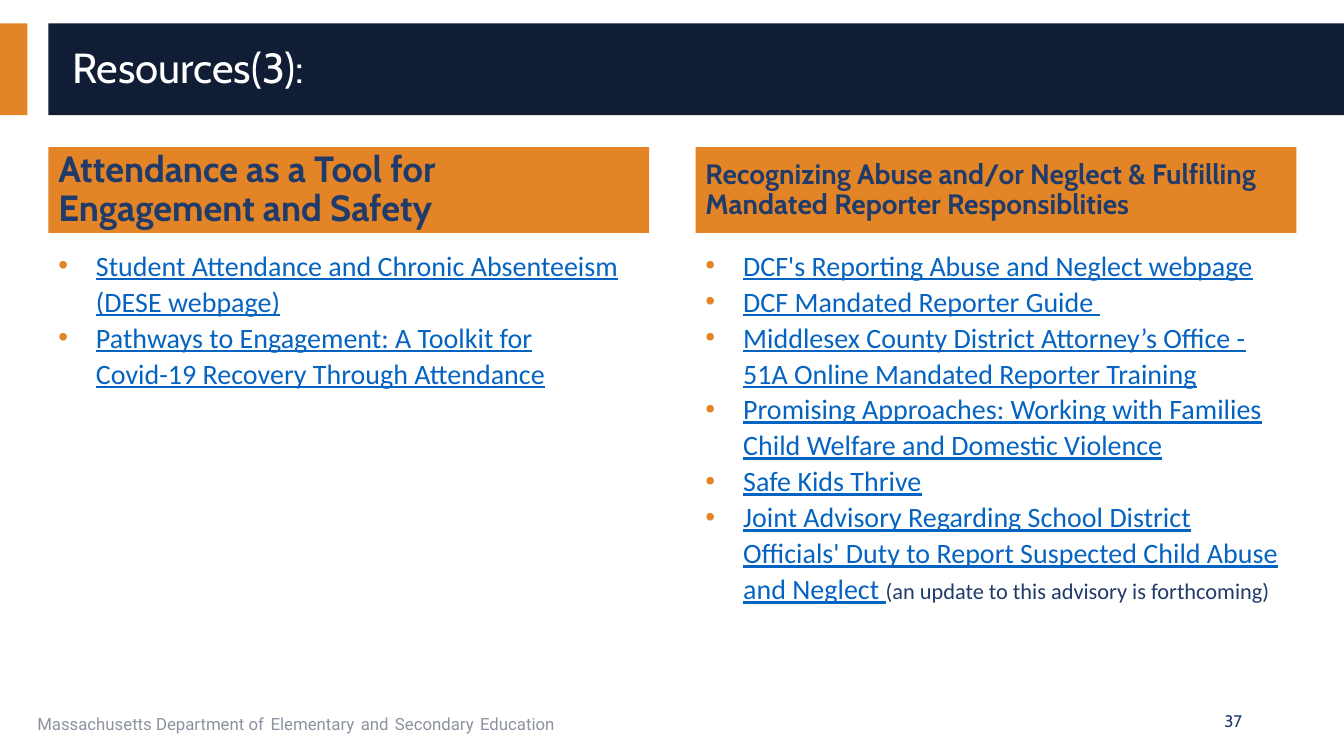
from lxml.etree import SubElement as Sub
from pptx import Presentation as Deck
from pptx.dml.color import RGBColor as Rgb
from pptx.enum.shapes import MSO_SHAPE as Kind
from pptx.enum.text import MSO_ANCHOR as Anchor, PP_ALIGN as Align
from pptx.oxml.ns import qn
from pptx.util import Cm, Pt

HUES = {"orange": "E38526", "navy": "101D35", "blue": "203B6A",
        "link": "0563C1", "gray": "8D92A1", "white": "FFFFFF"}

LEFT = [
    "Student Attendance and Chronic Absenteeism (DESE webpage)",
    "Pathways to Engagement: A Toolkit for Covid-19 Recovery Through Attendance",
]
RIGHT = [
    "DCF's Reporting Abuse and Neglect webpage",
    "DCF Mandated Reporter Guide ",
    "Middlesex County District Attorney’s Office - 51A Online Mandated Reporter Training",
    "Promising Approaches: Working with Families Child Welfare and Domestic Violence",
    "Safe Kids Thrive",
    "Joint Advisory Regarding School District Officials' Duty to Report Suspected "
    "Child Abuse and Neglect ",
]
NOTE = "(an update to this advisory is forthcoming)"
OWNER = ["Massachusetts Department of", "Elementary", "and", "Secondary", "Education"]


def tint(name):
    return Rgb.from_string(HUES[name])


def write(para, text, size=20, face="Cabin", hue="blue", bold=False, line=False):
    run = para.add_run()
    run.text = text
    font = run.font
    font.size, font.name = Pt(size), face
    font.bold, font.underline = bold, line
    font.color.rgb = tint(hue)


def bar(slide, x, y, w, h, hue):
    shape = slide.shapes.add_shape(Kind.RECTANGLE, Cm(x), Cm(y), Cm(w), Cm(h))
    shape.shadow.inherit = False
    shape.fill.solid()
    shape.fill.fore_color.rgb = tint(hue)
    shape.line.fill.background()
    return shape


def frame(slide, x, y, w, h, anchor=Anchor.TOP):
    area = slide.shapes.add_textbox(Cm(x), Cm(y), Cm(w), Cm(h)).text_frame
    area.word_wrap = True
    area.vertical_anchor = anchor
    return area


def bullet(para):
    props = para._p.get_or_add_pPr()
    props.set("marL", str(Cm(0.95)))
    props.set("indent", str(-Cm(0.95)))
    Sub(Sub(props, qn("a:buClr")), qn("a:srgbClr"), val=HUES["orange"])
    Sub(props, qn("a:buFont"), typeface="Arial")
    Sub(props, qn("a:buChar"), char="•")
    para.line_spacing = 1.07


def header(slide, x, y, w, h, title):
    bar(slide, x, y, 0.69, h, "orange")
    bar(slide, x + 1.22, y, w - 1.22, h, "navy")
    para = frame(slide, x + 1.57, y + 0.22, 31.75, h - 0.43, Anchor.MIDDLE).paragraphs[0]
    para.line_spacing = 0.9
    write(para, title, size=30, hue="white")


def column(slide, x, y, w, h, head, size, items, note=""):
    area = bar(slide, x, y, w, 2.16, "orange").text_frame
    area.word_wrap = True
    area.vertical_anchor = Anchor.MIDDLE
    para = area.paragraphs[0]
    para.alignment = Align.LEFT
    para.line_spacing = 0.9
    write(para, head, size=size, bold=True)

    area = frame(slide, x, y + 2.36, w, h - 2.36)
    for i, item in enumerate(items):
        para = area.add_paragraph() if i else area.paragraphs[0]
        bullet(para)
        write(para, item, face="Calibri", hue="link", line=True)
    if note:
        write(para, note, size=16, face="Calibri")


def footer(slide, x, y, w, h, words, page):
    para = frame(slide, x, y, 21.44, h).paragraphs[0]
    for i, word in enumerate(words):
        if i:
            write(para, " ", size=18, face="Roboto")
        write(para, word, size=12, face="Roboto", hue="gray")
    para = frame(slide, x + w - 7.62, y, 7.62, h, Anchor.MIDDLE).paragraphs[0]
    para.alignment = Align.RIGHT
    write(para, page, size=12)


def main():
    deck = Deck()
    deck.slide_width, deck.slide_height = Cm(33.87), Cm(19.05)
    slide = deck.slides.add_slide(deck.slide_layouts[6])
    header(slide, 0, 0.59, 33.87, 2.31, "Resources(3):")
    column(slide, 1.22, 3.71, 15.14, 12.9,
           "Attendance as a Tool for Engagement and Safety", 26, LEFT)
    column(slide, 17.53, 3.71, 15.14, 12.9,
           "Recognizing Abuse and/or Neglect & Fulfilling Mandated Reporter Responsiblities",
           20, RIGHT, NOTE)
    footer(slide, 0.69, 17.65, 30.86, 1.02, OWNER, "37")
    deck.save("out.pptx")


if __name__ == "__main__":
    main()
